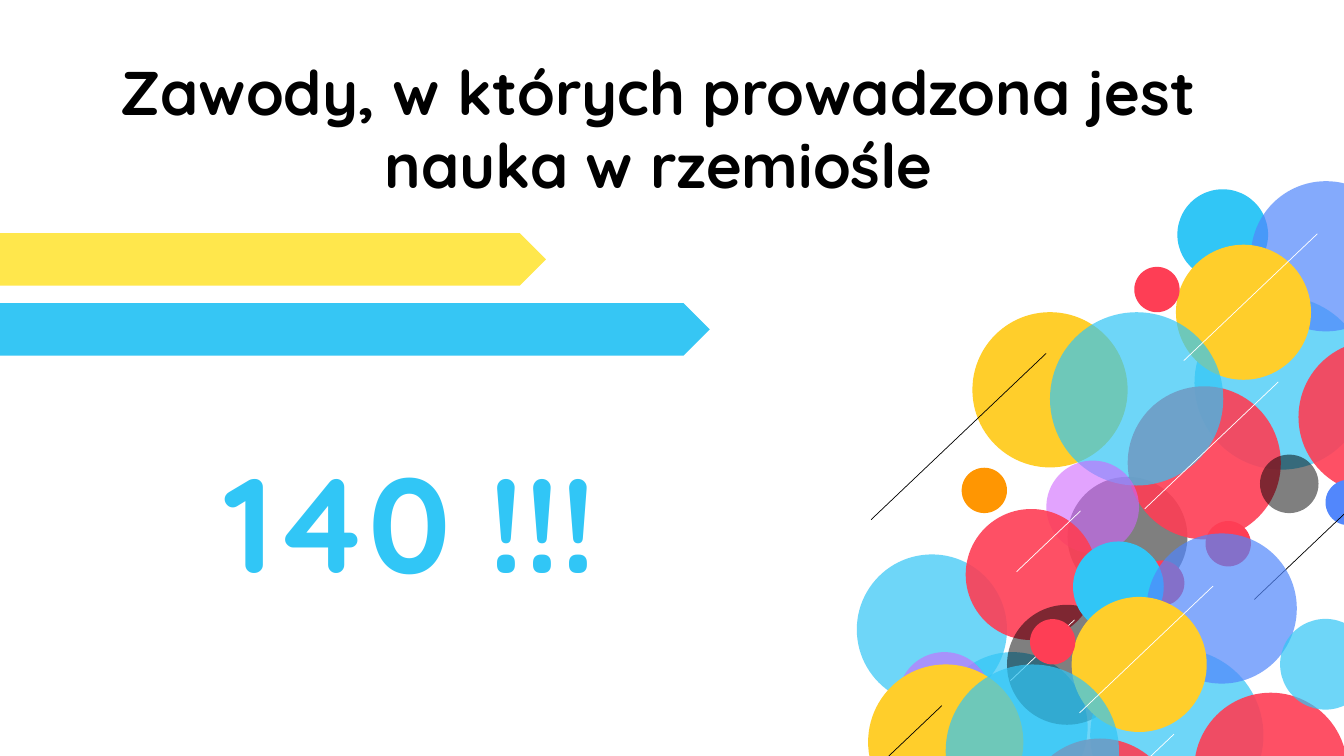
from lxml import etree
from pptx import Presentation
from pptx.dml.color import RGBColor
from pptx.enum import shapes, text
from pptx.oxml import ns
from pptx.util import Pt

BLACK = RGBColor(0x00, 0x00, 0x00)
WHITE = RGBColor(0xFF, 0xFF, 0xFF)
SKY = RGBColor(0x31, 0xC6, 0xF6)
BAR_BLUE = RGBColor(0x36, 0xC6, 0xF4)
BAR_YELLOW = RGBColor(0xFF, 0xE7, 0x4C)
GOLD = RGBColor(0xFF, 0xCE, 0x2B)
PERIWINKLE = RGBColor(0x51, 0x86, 0xFB)
ROYAL = RGBColor(0x52, 0x87, 0xFC)
RED = RGBColor(0xFE, 0x3E, 0x55)
ORANGE = RGBColor(0xFF, 0x96, 0x02)
VIOLET = RGBColor(0xCF, 0x66, 0xFE)

# Bubbles: left, top, diameter, colour, opacity in percent
BACK_BUBBLES = [
    (762.5, 340.6, 85.7, BLACK, 50),
    (669.6, 465.8, 107.3, SKY, 70),
]
SHARED_BUBBLES = [
    (853.2, 211.7, 123.8, SKY, 70),
    (694.6, 223, 110.9, GOLD, 100),
    (841, 135.2, 64.8, SKY, 100),
    (893.5, 129.4, 107.3, PERIWINKLE, 70),
    (840, 174.8, 96.5, GOLD, 100),
    (805.5, 275.9, 109.4, RED, 90),
    (750, 223, 123.8, SKY, 70),
    (810.2, 190.6, 32.4, RED, 100),
    (927.5, 243.2, 109.4, RED, 90),
]
FRONT_BUBBLES = [
    (686.9, 334.1, 32.4, ORANGE, 100),
    (612, 396, 107.3, SKY, 70),
    (747.4, 329, 66.2, VIOLET, 60),
    (689.8, 363.6, 93.6, RED, 90),
    (719.3, 432, 85.7, BLACK, 50),
    (794.2, 449.3, 32.4, RED, 100),
    (813.6, 400.3, 32.4, RED, 100),
    (946.8, 342.7, 32.4, ROYAL, 100),
    (900, 324.7, 41.8, BLACK, 50),
    (861.1, 372.2, 32.4, RED, 100),
    (641.5, 465.8, 66.2, VIOLET, 60),
]
LOWER_BUBBLE = (914.4, 442.1, 64.8, SKY, 70)

# Streaks: right end x, top y, horizontal run, colour
SHARED_STREAKS = [
    (747.2, 252.5, 125, BLACK),
    (941, 167, 95.4, WHITE),
    (913.1, 272.8, 95.4, WHITE),
]
UPPER_STREAKS = [
    (1021, 309.4, 125, BLACK),
    (771.8, 365, 45.7, WHITE),
    (767.5, 442.8, 45.7, WHITE),
]
STREAK_SLOPE = 0.95
LOWER_SHIFT = (-74.5, 251.6)


def shifted(items, dx, dy):
    return [(x + dx, y + dy, *rest) for x, y, *rest in items]


class SlideBuilder:
    font = "Quicksand"
    streak_width = 0.5

    def __init__(self, slide):
        self.slide = slide

    def preset(self, parent, kind, left, top, width, height, color):
        shape = parent.add_shape(kind, Pt(left), Pt(top), Pt(width), Pt(height))
        shape.shadow.inherit = False
        shape.fill.solid()
        shape.fill.fore_color.rgb = color
        shape.line.fill.background()
        return shape

    def bubble(self, parent, left, top, size, color, opacity):
        circle = self.preset(parent, shapes.MSO_SHAPE.OVAL, left, top, size, size, color)
        if opacity < 100:
            srgb = circle.fill._xPr.find(".//" + ns.qn("a:srgbClr"))
            etree.SubElement(srgb, ns.qn("a:alpha"), val=str(opacity * 1000))

    def streak(self, parent, x, y, run, color):
        line = parent.add_connector(
            shapes.MSO_CONNECTOR.STRAIGHT,
            Pt(x), Pt(y), Pt(x - run), Pt(y + run * STREAK_SLOPE))
        line.line.color.rgb = color
        line.line.width = Pt(self.streak_width)
        etree.SubElement(line._element.spPr, ns.qn("a:effectLst"))

    def cluster(self, bubbles, streaks):
        group = self.slide.shapes.add_group_shape().shapes
        for bubble in bubbles:
            self.bubble(group, *bubble)
        for streak in streaks:
            self.streak(group, *streak)

    def bar(self, top, width, color):
        self.preset(self.slide.shapes, shapes.MSO_SHAPE.PENTAGON,
                    0, top, width, 37.6, color)

    def words(self, left, top, width, height, lines, size, color, wrap):
        """Add a text box; lines holds pairs of wording and alignment."""
        box = self.slide.shapes.add_textbox(Pt(left), Pt(top), Pt(width), Pt(height))
        frame = box.text_frame
        frame.word_wrap = wrap
        frame.auto_size = text.MSO_AUTO_SIZE.SHAPE_TO_FIT_TEXT
        frame.text = "\n".join(wording for wording, _ in lines)
        for paragraph, (_, alignment) in zip(frame.paragraphs, lines):
            paragraph.alignment = alignment
            paragraph.font.name = self.font
            paragraph.font.size = Pt(size)
            paragraph.font.bold = True
            paragraph.font.color.rgb = color


def main():
    presentation = Presentation()
    presentation.slide_width = Pt(960)
    presentation.slide_height = Pt(540)
    builder = SlideBuilder(presentation.slides.add_slide(presentation.slide_layouts[6]))

    builder.cluster(BACK_BUBBLES + SHARED_BUBBLES + FRONT_BUBBLES,
                    SHARED_STREAKS + UPPER_STREAKS)
    builder.words(79.2, 34.6, 801.4, 113.8,
                  [("Zawody, w których prowadzona jest", text.PP_ALIGN.LEFT),
                   ("nauka w rzemiośle", text.PP_ALIGN.CENTER)],
                  44, BLACK, wrap=False)
    builder.bar(166.5, 390, BAR_YELLOW)
    builder.bar(216.5, 507, BAR_BLUE)
    builder.words(153.4, 310.3, 305.3, 123.8,
                  [("140 !!!", text.PP_ALIGN.LEFT)], 96, SKY, wrap=True)
    builder.cluster(shifted(SHARED_BUBBLES, *LOWER_SHIFT) + [LOWER_BUBBLE],
                    shifted(SHARED_STREAKS, *LOWER_SHIFT))

    presentation.save("out.pptx")


if __name__ == "__main__":
    main()
